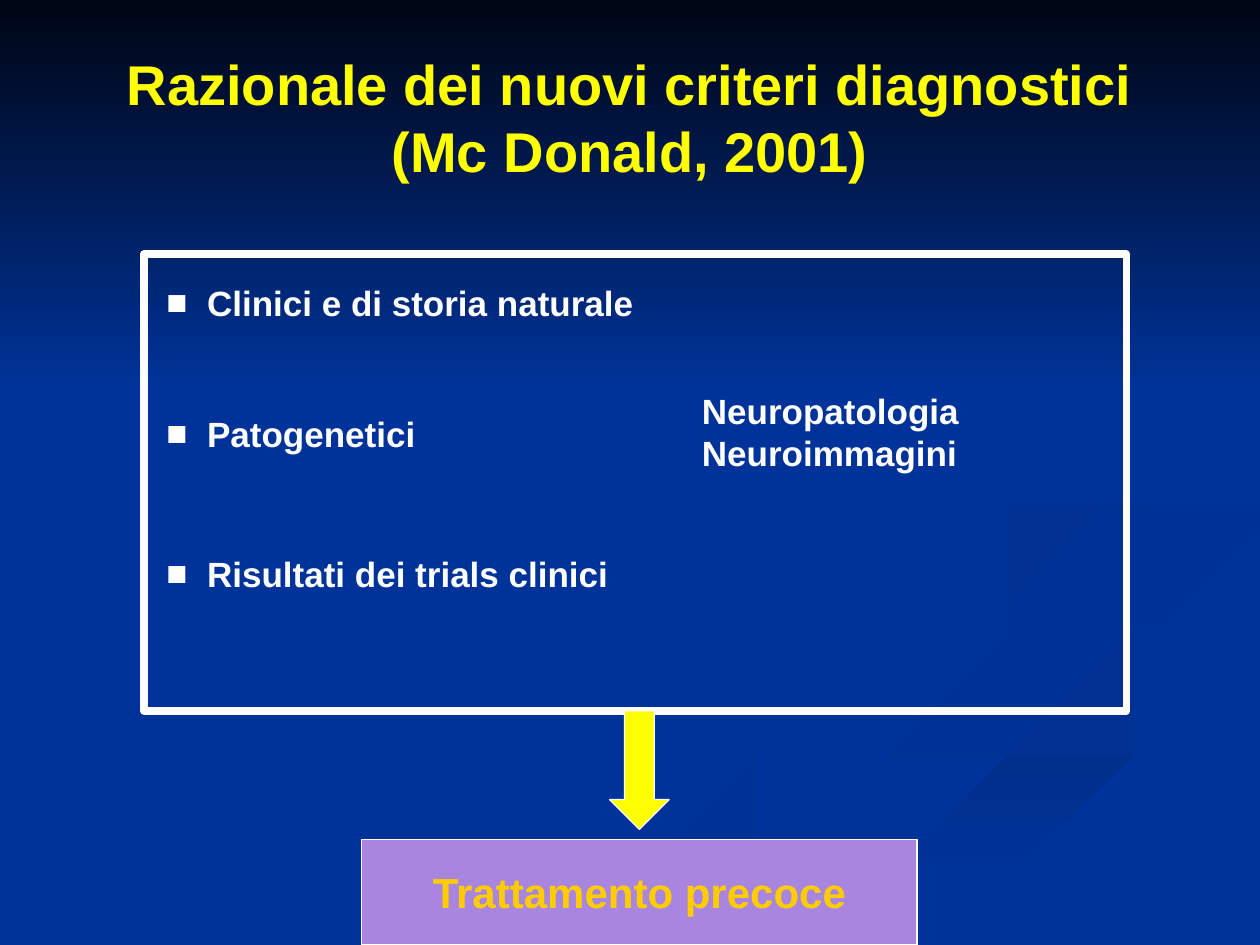
import pptx
import pptx.dml.color
import pptx.enum.shapes
import pptx.enum.text
import pptx.oxml.ns
import pptx.util
from lxml import etree

Cm = pptx.util.Cm
Pt = pptx.util.Pt
ALIGN = pptx.enum.text.PP_ALIGN
ANCHOR = pptx.enum.text.MSO_ANCHOR
SHAPE = pptx.enum.shapes.MSO_SHAPE

NAVY, WHITE, YELLOW = "003399", "FFFFFF", "FFFF00"
GRID = Cm(2.54)  # unit of the ribbon edges

# Each ribbon: start colour, end colour, clockwise angle, its two edges
RIBBONS = [
    (NAVY, "003193", 0,
     [(5.75, 4.6), (6, 4.9), (6.8, 5.19), (7.8, 5.53), (8, 5.83), (7, 6.28), (5, 6.87), (3.6, 7.49)],
     [(5.75, 4.6), (5.8, 4.84), (6.8, 5.2), (7.75, 5.53), (7.8, 5.8), (6.8, 6.13), (4.6, 6.74), (3, 7.49)]),
    (NAVY, "003193", 45,
     [(7.24, 4.64), (7.6, 5), (8.9, 5.35), (9.43, 5.7), (8.94, 6.05)],
     [(7.24, 4.64), (7.55, 5.05), (8.7, 5.44), (9.18, 5.8), (8.94, 6.05)]),
    ("002F8C", NAVY, 90,
     [(5, 7.49), (6.3, 6.93), (8, 6.38), (9.98, 5.81)],
     [(5.7, 7.49), (6.7, 7.02), (8.2, 6.51), (9.98, 6.09)]),
    ("003091", NAVY, 45,
     [(9.98, 4.02), (8.35, 4.3), (7.81, 4.6), (8.26, 4.96)],
     [(9.98, 4.2), (8.6, 4.43), (8.05, 4.72), (8.26, 4.96)]),
    ("002F8E", NAVY, 45,
     [(7.62, 2.33), (8.64, 2.91), (8.92, 3.54), (8.1, 4.07), (6.5, 4.36), (5.94, 4.75), (6.22, 5)],
     [(7.62, 2.33), (8.46, 2.8), (8.88, 3.41), (7.9, 3.92), (6.25, 4.26), (5.77, 4.62), (6.22, 5)]),
]


def color(hex_code):
    return pptx.dml.color.RGBColor.from_string(hex_code)


def place(shape, left, top, width, height):
    shape.left, shape.top, shape.width, shape.height = left, top, width, height


def style_text(text_frame, size, hex_code, align=ALIGN.LEFT):
    for paragraph in text_frame.paragraphs:
        paragraph.alignment = align
        for run in paragraph.runs:
            run.font.name, run.font.size, run.font.bold = "Arial", Pt(size), True
            run.font.color.rgb = color(hex_code)


def style_shape(shape, fill=None, line=None, line_width=0.75):
    shape.shadow.inherit = False
    if fill:
        shape.fill.solid()
        shape.fill.fore_color.rgb = color(fill)
    else:
        shape.fill.background()
    if line:
        shape.line.color.rgb = color(line)
        shape.line.width = Pt(line_width)
    else:
        shape.line.fill.background()


def fade(shape, first, last, angle):
    style_shape(shape)
    shape.fill.gradient()
    shape.fill.gradient_angle = (360 - angle) % 360
    for stop, hex_code in zip(shape.fill.gradient_stops, (first, last)):
        stop.color.rgb = color(hex_code)


def smooth_edge(points, steps=6):
    """Run a Catmull-Rom curve through the points."""
    padded = [points[0], *points, points[-1]]
    curve = []
    for a, b, c, d in zip(padded, padded[1:], padded[2:], padded[3:]):
        for step in range(steps):
            t = step / steps
            curve.append(tuple(
                q + t * (r - p + t * (2 * p - 5 * q + 4 * r - s + t * (3 * (q - r) + s - p))) / 2
                for p, q, r, s in zip(a, b, c, d)))
    return curve + [points[-1]]


def add_backdrop(slide, left, top, width):
    slide.background.fill.solid()
    slide.background.fill.fore_color.rgb = color(NAVY)
    # Curved ribbons
    for first, last, angle, near_edge, far_edge in RIBBONS:
        outline = smooth_edge(near_edge) + smooth_edge(far_edge)[::-1]
        builder = slide.shapes.build_freeform(*outline[0], scale=GRID)
        builder.add_line_segments(outline[1:], close=True)
        fade(builder.convert_to_shape(left, top), first, last, angle)
    # Dark band at the top
    band = slide.shapes.add_shape(SHAPE.RECTANGLE, left, top, width, Cm(7.82))
    fade(band, "000514", NAVY, 90)


def add_title(slide, left, top, width, height):
    title = slide.shapes.title
    title.element.getparent().append(title.element)  # in front of the backdrop
    place(title, left, top, width, height)
    title.text_frame.text = "Razionale dei nuovi criteri diagnostici (Mc Donald, 2001)"
    title.text_frame.vertical_anchor = ANCHOR.MIDDLE
    style_text(title.text_frame, 32, YELLOW, ALIGN.CENTER)


def set_square_bullet(paragraph):
    properties = paragraph._p.get_or_add_pPr()
    properties.set("marL", str(Cm(0.82)))
    properties.set("indent", str(-Cm(0.82)))
    for tag, name, value in (("a:buFont", "typeface", "Arial"), ("a:buChar", "char", "■")):
        etree.SubElement(properties, pptx.oxml.ns.qn(tag)).set(name, value)


def add_criteria(slide, left, top, width, height):
    # Frame
    frame = slide.shapes.add_shape(SHAPE.RECTANGLE, left, top, width, height)
    style_shape(frame, line=WHITE, line_width=4.5)

    # List of criteria
    body = slide.placeholders[1]
    body.element.getparent().append(body.element)
    place(body, left + Cm(0.2), top + Cm(0.41), Cm(10.6), Cm(7.2))
    text_frame = body.text_frame
    text_frame.text = "Clinici e di storia naturale\nPatogenetici\nRisultati dei trials clinici"
    text_frame.auto_size = pptx.enum.text.MSO_AUTO_SIZE.NONE
    style_text(text_frame, 20, WHITE)
    for paragraph, gap in zip(text_frame.paragraphs, (0, 51, 56)):
        paragraph.space_before = Pt(gap)
        set_square_bullet(paragraph)

    # Sources for the pathogenetic criteria
    sources = slide.shapes.add_textbox(left + Cm(11), top + Cm(2.59), Cm(7.21), Cm(1.96))
    sources.text_frame.word_wrap = True
    sources.text_frame.text = "Neuropatologia\nNeuroimmagini"
    style_text(sources.text_frame, 20, WHITE)


def add_conclusion(slide, left, top, width, height):
    # Result box below the arrow
    arrow_height, gap = Cm(2.39), Cm(0.2)
    offset = arrow_height + gap
    box = slide.shapes.add_shape(SHAPE.RECTANGLE, left, top + offset, width, height - offset)
    style_shape(box, "A886E0", WHITE)
    box.text_frame.text = "Trattamento precoce"
    box.text_frame.vertical_anchor = ANCHOR.MIDDLE
    style_text(box.text_frame, 24, "FFCC00", ALIGN.CENTER)

    # Arrow from the frame
    arrow_width = Cm(1.2)
    arrow = slide.shapes.add_shape(
        SHAPE.DOWN_ARROW, left + (width - arrow_width) // 2, top, arrow_width, arrow_height)
    style_shape(arrow, YELLOW, WHITE)


def main():
    presentation = pptx.Presentation()
    presentation.slide_width, presentation.slide_height = Cm(25.4), Cm(19.05)
    slide = presentation.slides.add_slide(presentation.slide_layouts[1])
    add_backdrop(slide, Cm(0), Cm(0), presentation.slide_width)
    add_title(slide, Cm(1.27), Cm(0.76), Cm(22.86), Cm(3.18))
    add_criteria(slide, Cm(2.9), Cm(5.13), Cm(19.81), Cm(9.2))
    add_conclusion(slide, Cm(7.29), Cm(14.33), Cm(11.2), Cm(4.72))
    presentation.save("out.pptx")


if __name__ == "__main__":
    main()
